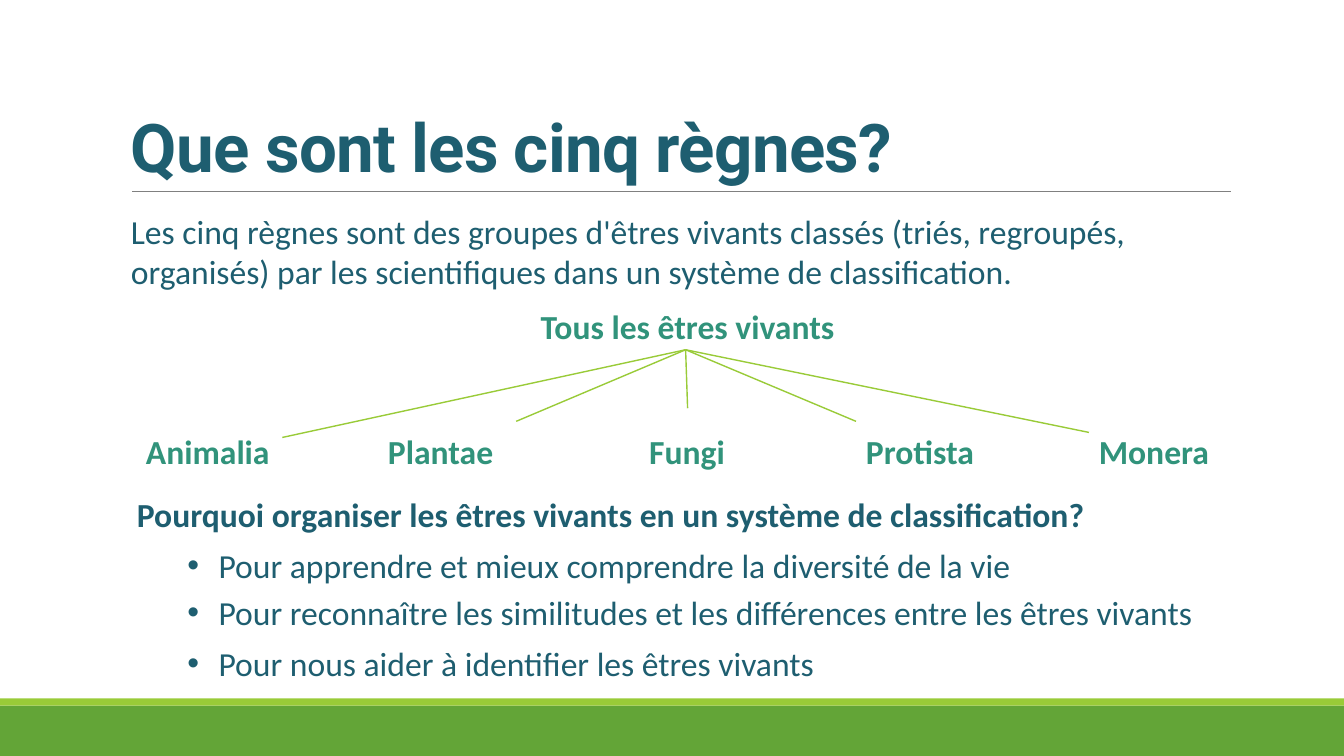
"""Slide on the five kingdoms of living things and why they are classified."""
import pptx
import pptx.dml.color
import pptx.enum.shapes
import pptx.enum.text
import pptx.util
from lxml import etree
from pptx.oxml.ns import qn

PX = 9144
NAVY = pptx.dml.color.RGBColor(0x1E, 0x5E, 0x70)
TEAL = pptx.dml.color.RGBColor(0x31, 0x93, 0x7B)
GREEN = pptx.dml.color.RGBColor(0x63, 0xA5, 0x37)
LIME = pptx.dml.color.RGBColor(0x99, 0xCB, 0x38)
GREY = pptx.dml.color.RGBColor(0x80, 0x80, 0x80)

deck = pptx.Presentation()
deck.slide_width, deck.slide_height = 1333 * PX, 750 * PX
slide = deck.slides.add_slide(deck.slide_layouts[6])


def add_text(words, left, top, width, height, color, bold=False, size=24, face="Calibri", bullet=False):
    box = slide.shapes.add_textbox(left * PX, top * PX, width * PX, height * PX)
    box.text_frame.word_wrap = True
    paragraph = box.text_frame.paragraphs[0]
    if bullet:
        properties = paragraph._p.get_or_add_pPr()
        properties.set("marL", str(31 * PX))
        properties.set("indent", str(-31 * PX))
        etree.SubElement(properties, qn("a:buFont")).set("typeface", "Arial")
        etree.SubElement(properties, qn("a:buChar")).set("char", "•")
    run = paragraph.add_run()
    run.text = words
    run.font.name = face
    run.font.size = pptx.util.Pt(size)
    run.font.bold = bold
    run.font.color.rgb = color
    return box.text_frame


def add_line(x1, y1, x2, y2, color, weight):
    line = slide.shapes.add_connector(
        pptx.enum.shapes.MSO_CONNECTOR.STRAIGHT, x1 * PX, y1 * PX, x2 * PX, y2 * PX)
    line.line.color.rgb = color
    line.line.width = pptx.util.Pt(weight)
    etree.SubElement(line._element.spPr, qn("a:effectLst"))


for top, height, color in [(700, 50, GREEN), (693, 7, LIME)]:
    band = slide.shapes.add_shape(
        pptx.enum.shapes.MSO_SHAPE.RECTANGLE, 0, top * PX, 1333 * PX, height * PX)
    band.shadow.inherit = False
    band.fill.solid()
    band.fill.fore_color.rgb = color
    band.line.fill.background()

add_line(131, 190, 1221, 190, GREY, 0.5)
title = add_text("Que sont les cinq règnes?", 120, 31, 1100, 159, NAVY, True, 48, "Roboto")
title.vertical_anchor = pptx.enum.text.MSO_ANCHOR.BOTTOM
title.paragraphs[0].line_spacing = 0.85
title.paragraphs[0].runs[0]._r.get_or_add_rPr().set("spc", "-50")

add_text("Les cinq règnes sont des groupes d'êtres vivants classés (triés, regroupés, "
         "organisés) par les scientifiques dans un système de classification.",
         120, 204, 1100, 91, NAVY)

root = add_text("Tous les êtres vivants", 508, 299, 348, 50, TEAL, True)
root.paragraphs[0].alignment = pptx.enum.text.PP_ALIGN.CENTER

kingdoms = [
    ("Animalia", 135, 164, 280, 434),
    ("Plantae", 375, 137, 512, 418),
    ("Fungi", 634, 98, 682, 405),
    ("Protista", 849, 131, 849, 418),
    ("Monera", 1080, 140, 1080, 429),
]
for kingdom, left, width, branch_x, branch_y in kingdoms:
    add_text(kingdom, left, 423, width, 45, TEAL, True)
    add_line(branch_x, branch_y, 680, 347, LIME, 1)

add_text("Pourquoi organiser les êtres vivants en un système de classification?",
         126, 485, 1007, 50, NAVY, True)
reasons = [
    ("Pour apprendre et mieux comprendre la diversité de la vie", 536),
    ("Pour reconnaître les similitudes et les différences entre les êtres vivants", 582),
    ("Pour nous aider à identifier les êtres vivants", 633),
]
for reason, top in reasons:
    add_text(reason, 176, top, 1057, 50, NAVY, bullet=True)

deck.save("out.pptx")
